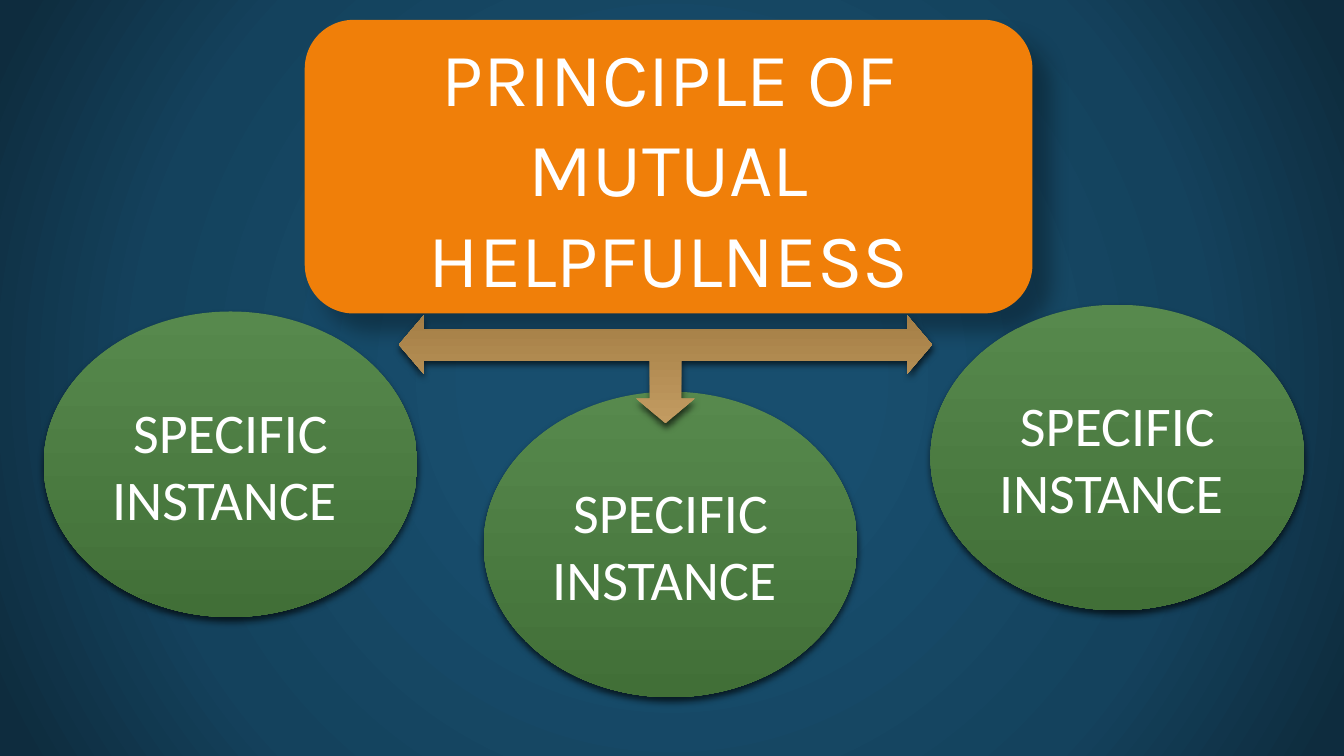
"""Build a slide that links one principle to three specific instances."""
from dataclasses import dataclass

from lxml import etree
from pptx import Presentation
from pptx.dml.color import RGBColor
from pptx.enum.shapes import MSO_SHAPE
from pptx.enum.text import MSO_ANCHOR, MSO_AUTO_SIZE, PP_ALIGN
from pptx.oxml import parse_xml
from pptx.oxml.ns import nsdecls, qn
from pptx.util import Cm, Pt

ROUNDED = MSO_SHAPE.ROUNDED_RECTANGLE
OVAL = MSO_SHAPE.OVAL
THREE_WAY_ARROW = MSO_SHAPE.LEFT_RIGHT_UP_ARROW
MIDDLE = MSO_ANCHOR.MIDDLE
NO_AUTOFIT = MSO_AUTO_SIZE.NONE
CENTER = PP_ALIGN.CENTER
TITLE_ONLY = 5


@dataclass(frozen=True)
class Theme:
    """Colours, fonts, sizes and shadows of the slide."""
    backdrop: tuple = ((0, "184E6E"), (23, "184E6E"), (69, "14425D"), (97, "0E2C3E"))
    panel: tuple = ("F07F09",)
    instance: tuple = ("57894D", "416F37")
    arrow: tuple = ("C29B61", "A57F46")
    text: str = "FFFFFF"
    shadow: str = "000000"
    title_font: str = "Karla"
    body_font: str = "Calibri"
    title_size: int = 54
    body_size: int = 40
    panel_shadow: tuple = (30, 15, 18, 45)
    soft_shadow: tuple = (65, 5, 3, 90)


THEME = Theme()


def set_background(s, stops):
    """Give the slide a circular gradient from its centre."""
    gs = "".join(f'<a:gs pos="{pos * 1000}"><a:srgbClr val="{color}"/></a:gs>'
                 for pos, color in stops)
    bg = parse_xml(
        f'<p:bg {nsdecls("p", "a")}><p:bgPr><a:gradFill rotWithShape="1">'
        f'<a:gsLst>{gs}</a:gsLst><a:path path="circle">'
        '<a:fillToRect l="50000" t="50000" r="50000" b="50000"/></a:path>'
        '</a:gradFill><a:effectLst/></p:bgPr></p:bg>')
    s.element.cSld.insert(0, bg)


def add_shadow(sp, opacity, blur, distance, angle):
    """Cast an outer shadow; lengths are in points, the angle in degrees."""
    sp.shadow.inherit = False
    effects = sp.element.spPr.find(qn("a:effectLst"))
    outer = etree.SubElement(
        effects, qn("a:outerShdw"), blurRad=str(Pt(blur)), dist=str(Pt(distance)),
        dir=str(angle * 60000), algn="ctr", rotWithShape="0")
    color = etree.SubElement(outer, qn("a:srgbClr"), val=THEME.shadow)
    etree.SubElement(color, qn("a:alpha"), val=str(opacity * 1000))


def add_figure(s, kind, box, colors, shadow):
    """Add a borderless shape with a plain or vertical gradient fill."""
    sp = s.shapes.add_shape(kind, *map(Cm, box))
    if len(colors) == 1:
        sp.fill.solid()
        sp.fill.fore_color.rgb = RGBColor.from_string(colors[0])
    else:
        sp.fill.gradient()
        sp.fill.gradient_angle = 270
        for stop, color in zip(sp.fill.gradient_stops, colors):
            stop.color.rgb = RGBColor.from_string(color)
    sp.line.fill.background()
    add_shadow(sp, *shadow)
    return sp


def set_text(sp, text, font, size):
    """Write one centred paragraph in the given font."""
    tf = sp.text_frame
    tf.text = text
    tf.word_wrap = True
    tf.auto_size = NO_AUTOFIT
    tf.vertical_anchor = MIDDLE
    p = tf.paragraphs[0]
    p.alignment = CENTER
    p.font.name = font
    p.font.size = Pt(size)
    p.font.color.rgb = RGBColor.from_string(THEME.text)


def add_title(s, text, box):
    """Place the slide title on a rounded panel."""
    panel = add_figure(s, ROUNDED, box, THEME.panel, THEME.panel_shadow)
    title = s.shapes.title
    title.left, title.top, title.width, title.height = map(Cm, box)
    set_text(title, text, THEME.title_font, THEME.title_size)
    title.element.addprevious(panel.element)


def add_instance(s, left, top):
    """Add one green circle for a specific instance."""
    sp = add_figure(s, OVAL, (left, top, 9.42, 7.7), THEME.instance, THEME.soft_shadow)
    set_text(sp, "SPECIFIC INSTANCE ", THEME.body_font, THEME.body_size)


def add_arrow(s, box):
    """Add the arrow that points left, right and down."""
    sp = add_figure(s, THREE_WAY_ARROW, box, THEME.arrow, THEME.soft_shadow)
    sp.rotation = 180
    for i, value in enumerate((0.29, 0.27, 0.27)):
        sp.adjustments[i] = value


def main():
    """Build and save the slide."""
    prs = Presentation()
    prs.slide_width, prs.slide_height = Cm(33.87), Cm(19.05)
    s = prs.slides.add_slide(prs.slide_layouts[TITLE_ONLY])
    set_background(s, THEME.backdrop)
    add_title(s, "PRINCIPLE OF MUTUAL HELPFULNESS", (7.68, 0.5, 18.34, 7.4))
    for left, top in ((1.1, 7.85), (12.19, 9.87), (23.45, 7.68)):
        add_instance(s, left, top)
    add_arrow(s, (10.05, 7.95, 13.44, 2.72))
    prs.save("out.pptx")


if __name__ == "__main__":
    main()
